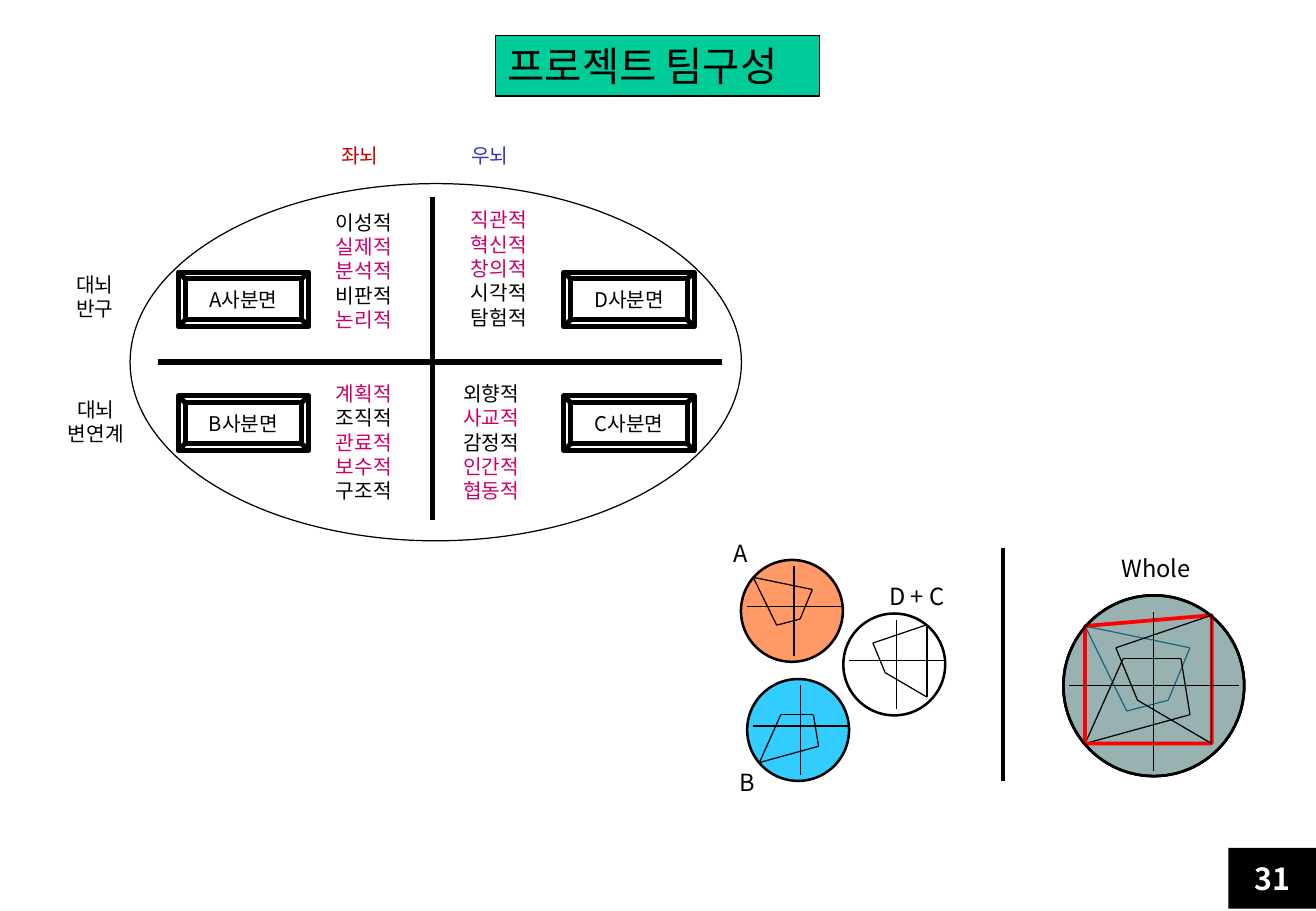
from lxml import etree
from pptx import Presentation
from pptx.dml.color import RGBColor
from pptx.enum.shapes import MSO_CONNECTOR, MSO_SHAPE
from pptx.enum.text import MSO_ANCHOR, PP_ALIGN
from pptx.oxml.ns import qn
from pptx.util import Cm, Pt

RECT, OVAL, BEVEL = MSO_SHAPE.RECTANGLE, MSO_SHAPE.OVAL, MSO_SHAPE.BEVEL
STRAIGHT = MSO_CONNECTOR.STRAIGHT
LEFT, CENTER = PP_ALIGN.LEFT, PP_ALIGN.CENTER
TOP, MIDDLE = MSO_ANCHOR.TOP, MSO_ANCHOR.MIDDLE

BLACK = RGBColor(0x00, 0x00, 0x00)
WHITE = RGBColor(0xFF, 0xFF, 0xFF)
GREEN = RGBColor(0x00, 0xCC, 0x99)
PINK = RGBColor(0xCC, 0x00, 0x66)
CRIMSON = RGBColor(0xCC, 0x00, 0x00)
INDIGO = RGBColor(0x33, 0x33, 0xCC)
ORANGE = RGBColor(0xFF, 0x99, 0x66)
BLUE = RGBColor(0x33, 0xCC, 0xFF)
RED = RGBColor(0xFF, 0x00, 0x00)
FONT = "Noto Sans CJK KR"

# Content: boxes are left, top, width, height in cm
TITLE = ("프로젝트 팀구성", (10.36, 0.74, 6.78, 1.27))
PAGE = ("31", (25.68, 17.73, 1.83, 1.27))
BRAIN = (2.72, 3.84, 12.78, 7.47)
BRAIN_AXES = [((3.3, 7.57), (15.09, 7.57)), ((9.04, 4.11), (9.04, 10.87))]
TRAITS = [  # runs of text and colour
    ((6.6, 4.27, 2.01, 2.82),
     [("이성적 ", BLACK), ("실제적 분석적 ", PINK), ("비판적 ", BLACK), ("논리적", PINK)]),
    ((9.35, 4.22, 2.16, 2.82),
     [("직관적 혁신적 창의적 ", PINK), ("시각적 탐험적", BLACK)]),
    ((6.6, 7.85, 2.01, 2.82),
     [("계획적 ", PINK), ("조직적 ", BLACK), ("관료적 보수적 ", PINK), ("구조적", BLACK)]),
    ((9.19, 7.85, 2.16, 2.82),
     [("외향적 ", BLACK), ("사교적 ", PINK), ("감정적 ", BLACK), ("인간적 협동적", PINK)]),
]
QUADRANTS = [["A사분면", "D사분면"], ["B사분면", "C사분면"]]
QUADRANT_X, QUADRANT_Y = (3.73, 11.79), (5.69, 8.28)
HALVES = [("좌뇌", 6.88, CRIMSON), ("우뇌", 9.6, INDIGO)]
LAYERS = [(["대뇌", "반구"], (0.76, 5.56, 2.44, 1.27)),
          (["대뇌", "변연계"], (0.25, 8.18, 3.51, 1.27))]

# Profile corners as fractions of the circle's diameter
PROFILE_A = [(0.12, 0.17), (0.35, 0.64), (0.58, 0.58), (0.7, 0.29)]
PROFILE_B = [(0.12, 0.82), (0.33, 0.35), (0.65, 0.35), (0.7, 0.66)]
PROFILE_DC = [(0.41, 0.58), (0.29, 0.29), (0.82, 0.11), (0.82, 0.82)]
WHOLE_OUTLINE = [PROFILE_A[0], PROFILE_B[0], PROFILE_DC[3], PROFILE_DC[2]]
CIRCLE_AXES = [((0.06, 0.46), (1, 0.46)), ((0.52, 0.06), (0.52, 0.94))]
WHOLE_AXES = [((0.03, 0.5), (0.97, 0.5)), ((0.5, 0.09), (0.5, 0.97))]
TEAMS = [((15.49, 11.71, 2.13, 2.13), ORANGE, PROFILE_A),
         ((15.62, 14.2, 2.13, 2.13), BLUE, PROFILE_B),
         ((17.63, 12.83, 2.13, 2.13), None, PROFILE_DC)]
WHOLE = (22.23, 12.45, 3.78, 3.78)
TEAM_LABELS = [("D + C", (18.34, 12.04, 1.96, 0.97)), ("A", (15.09, 11.15, 0.89, 0.97)),
               ("B", (15.21, 15.93, 0.91, 0.97)), ("Whole", (23.19, 11.46, 2.24, 0.97))]
DIVIDER = ((20.96, 11.46), (20.96, 16.33))

prs = Presentation()
prs.slide_width, prs.slide_height = Cm(27.51), Cm(19.05)
s = prs.slides.add_slide(prs.slide_layouts[6])


def write(sp, lines, size=12, color=BLACK, bold=False, align=CENTER, anchor=TOP, wrap=True):
    """Each line is a string or a list of (text, colour) runs."""
    tf = sp.text_frame
    tf.word_wrap, tf.vertical_anchor = wrap, anchor
    for i, line in enumerate(lines):
        p = tf.paragraphs[0] if i == 0 else tf.add_paragraph()
        p.alignment, p.line_spacing = align, Pt(size * 1.2)
        for text, tint in [(line, color)] if isinstance(line, str) else line:
            r = p.add_run()
            r.text = text
            f = r.font
            f.name, f.size, f.bold, f.color.rgb = FONT, Pt(size), bold, tint
            etree.SubElement(r._r.get_or_add_rPr(), qn("a:ea")).set("typeface", FONT)


def add_text(lines, box, **fmt):
    write(s.shapes.add_textbox(*map(Cm, box)), lines, **fmt)


def style(sp, fill=None, line=BLACK, width=0.75):
    sp.shadow.inherit = False
    if fill is None:
        sp.fill.background()
    else:
        sp.fill.solid()
        sp.fill.fore_color.rgb = fill
    if line is None:
        sp.line.fill.background()
    else:
        sp.line.color.rgb, sp.line.width = line, Pt(width)
    return sp


def add_box(kind, box, **look):
    return style(s.shapes.add_shape(kind, *map(Cm, box)), **look)


def add_line(start, end, width=0.75):
    c = s.shapes.add_connector(STRAIGHT, *map(Cm, start + end))
    c.line.color.rgb, c.line.width = BLACK, Pt(width)
    etree.SubElement(c._element.spPr, qn("a:effectLst"))


def place(points, circle):
    x, y, d, _ = circle
    return [(x + d * u, y + d * v) for u, v in points]


def add_axes(axes, circle):
    for axis in axes:
        add_line(*place(axis, circle))


def add_profile(profile, circle):
    corners = place(profile, circle)
    for start, end in zip(corners, corners[1:] + corners[:1]):
        add_line(start, end)


# Title and page number
write(add_box(RECT, TITLE[1], fill=GREEN), [TITLE[0]], size=24, align=LEFT, wrap=False)
write(add_box(RECT, PAGE[1], fill=BLACK, line=None), [PAGE[0]],
      size=18, color=WHITE, bold=True, anchor=MIDDLE)

# Brain quadrants
add_box(OVAL, BRAIN)
for start, end in BRAIN_AXES:
    add_line(start, end, width=3)
for box, runs in TRAITS:
    add_text([runs], box)
for y, row in zip(QUADRANT_Y, QUADRANTS):
    for x, name in zip(QUADRANT_X, row):
        write(add_box(BEVEL, (x, y, 2.72, 1.14), width=3), [name], anchor=MIDDLE, wrap=False)
for name, x, color in HALVES:
    add_text([name], (x, 2.87, 1.57, 0.76), color=color, align=LEFT)
for lines, box in LAYERS:
    add_text(lines, box)

# Team circles
for circle, fill, profile in TEAMS:
    add_box(OVAL, circle, fill=fill, width=1.5)
    add_axes(CIRCLE_AXES, circle)
    add_profile(profile, circle)
for name, box in TEAM_LABELS:
    add_text([name], box, size=14, align=LEFT, wrap=False)
add_line(*DIVIDER, width=2.25)

# Whole circle: profiles stacked under a half-transparent veil
add_box(OVAL, WHOLE, fill=ORANGE, width=1.5)
add_profile(PROFILE_A, WHOLE)
veil = add_box(OVAL, WHOLE, fill=BLUE, width=1.5)
tint = veil._element.spPr.find(qn("a:solidFill")).find(qn("a:srgbClr"))
etree.SubElement(tint, qn("a:alpha")).set("val", "50000")
add_profile(PROFILE_B, WHOLE)
corners = [(Cm(x), Cm(y)) for x, y in place(WHOLE_OUTLINE, WHOLE)]
fb = s.shapes.build_freeform(*corners[0])
fb.add_line_segments(corners[1:], close=True)
style(fb.convert_to_shape(), line=RED, width=2.25)
add_box(OVAL, WHOLE, width=1.5)
add_axes(WHOLE_AXES, WHOLE)
add_profile(PROFILE_DC, WHOLE)

prs.save("out.pptx")
